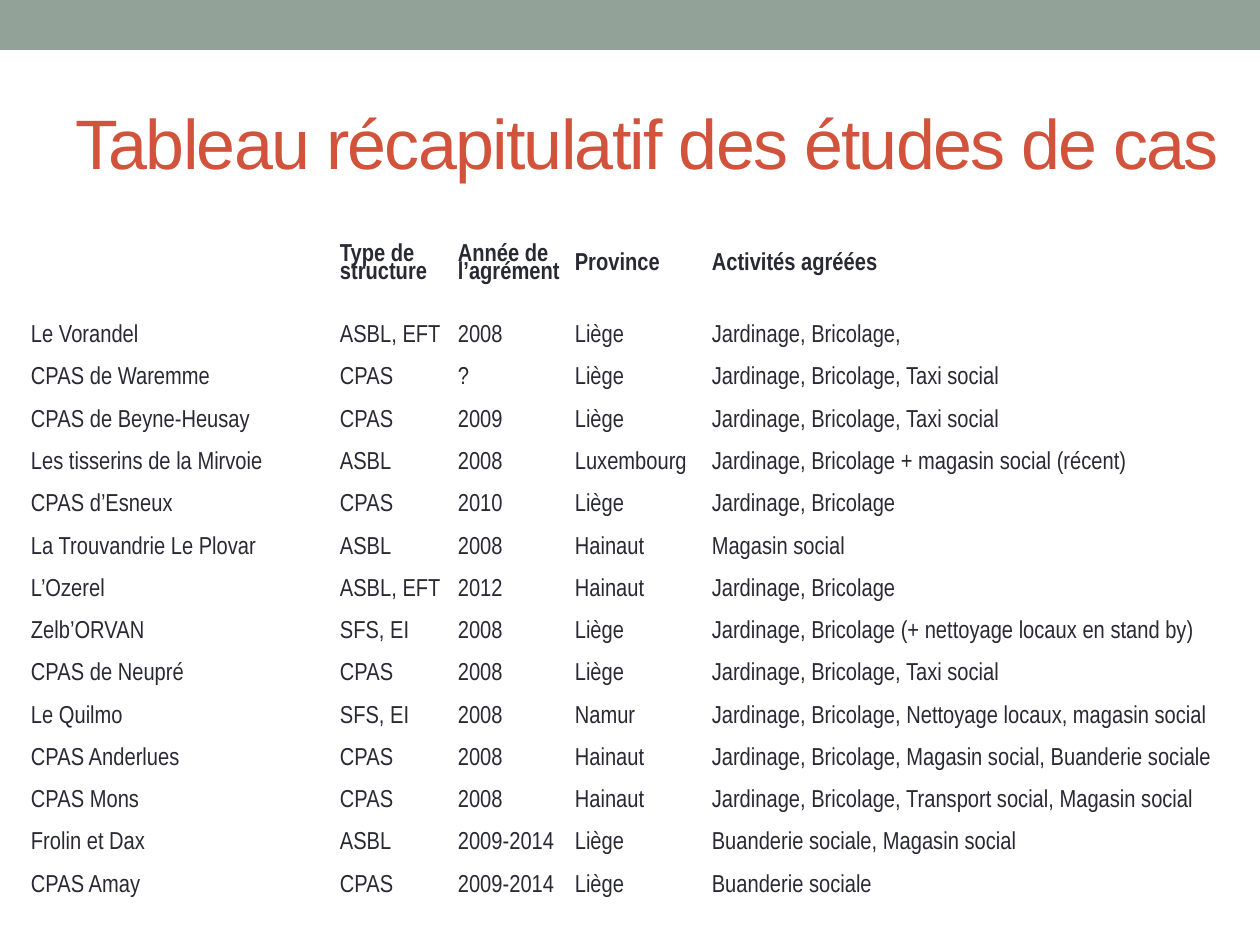
from lxml.etree import SubElement
from pptx import Presentation
from pptx.dml.color import RGBColor
from pptx.enum.shapes import MSO_SHAPE
from pptx.enum.text import MSO_ANCHOR, MSO_AUTO_SIZE, PP_ALIGN
from pptx.oxml.ns import qn
from pptx.util import Pt

PX = 914400 // 126
SAGE = RGBColor(0x93, 0xA2, 0x99)
BRICK = RGBColor(0xD2, 0x53, 0x3C)
INK = RGBColor(0x29, 0x29, 0x34)
WHITE = RGBColor(0xFF, 0xFF, 0xFF)

COLUMN_WIDTHS = [309, 118, 117, 137, 540]
HEADER_HEIGHT = 102
CELL_INSET = 6
ROWS = [
    ("", "Type de structure", "Année de l’agrément", "Province", "Activités agréées"),
    ("Le Vorandel", "ASBL, EFT", "2008", "Liège", "Jardinage, Bricolage,"),
    ("CPAS de Waremme", "CPAS", "?", "Liège", "Jardinage, Bricolage, Taxi social"),
    ("CPAS de Beyne-Heusay", "CPAS", "2009", "Liège", "Jardinage, Bricolage, Taxi social"),
    ("Les tisserins de la Mirvoie", "ASBL", "2008", "Luxembourg",
     "Jardinage, Bricolage + magasin social (récent)"),
    ("CPAS d’Esneux", "CPAS", "2010", "Liège", "Jardinage, Bricolage"),
    ("La Trouvandrie Le Plovar", "ASBL", "2008", "Hainaut", "Magasin social"),
    ("L’Ozerel", "ASBL, EFT", "2012", "Hainaut", "Jardinage, Bricolage"),
    ("Zelb’ORVAN", "SFS, EI", "2008", "Liège",
     "Jardinage, Bricolage (+ nettoyage locaux en stand by)"),
    ("CPAS de Neupré", "CPAS", "2008", "Liège", "Jardinage, Bricolage, Taxi social"),
    ("Le Quilmo", "SFS, EI", "2008", "Namur",
     "Jardinage, Bricolage, Nettoyage locaux, magasin social"),
    ("CPAS Anderlues", "CPAS", "2008", "Hainaut",
     "Jardinage, Bricolage, Magasin social, Buanderie sociale"),
    ("CPAS Mons", "CPAS", "2008", "Hainaut",
     "Jardinage, Bricolage, Transport social, Magasin social"),
    ("Frolin et Dax", "ASBL", "2009-2014", "Liège", "Buanderie sociale, Magasin social"),
    ("CPAS Amay", "CPAS", "2009-2014", "Liège", "Buanderie sociale"),
]


def scaled(box):
    return [length * PX for length in box]


def add_run(para, text, font_name, size, color, bold=False):
    span = para.add_run()
    span.text = text
    span.font.name = font_name
    span.font.size = Pt(size)
    span.font.bold = bold
    span.font.color.rgb = color
    return span


def add_band(page, box):
    band = page.shapes.add_shape(MSO_SHAPE.RECTANGLE, *scaled(box))
    band.shadow.inherit = False
    band.fill.solid()
    band.fill.fore_color.rgb = SAGE
    band.line.fill.background()


def fill_title(page, box, text):
    title = page.shapes.title
    title.left, title.top, title.width, title.height = scaled(box)
    frame = title.text_frame
    frame.word_wrap = True
    frame.auto_size = MSO_AUTO_SIZE.NONE
    frame.vertical_anchor = MSO_ANCHOR.MIDDLE
    para = frame.paragraphs[0]
    para.alignment = PP_ALIGN.LEFT
    span = add_run(para, text, "Arial", 40, BRICK)
    span.font._element.set("spc", "-100")


def add_borders(cell):
    properties = cell._tc.get_or_add_tcPr()
    for position, side in enumerate(("lnL", "lnR", "lnT", "lnB")):
        line = SubElement(properties, qn(f"a:{side}"), w=str(Pt(1)))
        fill = SubElement(line, qn("a:solidFill"))
        SubElement(fill, qn("a:srgbClr"), val=str(WHITE))
        properties.insert(position, line)


def fill_cell(cell, text, bold):
    cell.fill.background()
    add_borders(cell)
    cell.vertical_anchor = MSO_ANCHOR.MIDDLE
    cell.margin_left = cell.margin_right = CELL_INSET * PX
    cell.margin_top = cell.margin_bottom = CELL_INSET * PX
    para = cell.text_frame.paragraphs[0]
    para.line_spacing = 0.8
    if text:
        add_run(para, text, "Arial Narrow", 14, INK, bold)


def add_case_table(page, box):
    frame = page.shapes.add_table(len(ROWS), len(COLUMN_WIDTHS), *scaled(box))
    table = frame.table
    table.first_row = True
    table.horz_banding = False
    for column, width in zip(table.columns, COLUMN_WIDTHS):
        column.width = width * PX
    body_height = (box[3] - HEADER_HEIGHT) * PX // (len(ROWS) - 1)
    for index, (row, texts) in enumerate(zip(table.rows, ROWS)):
        row.height = body_height if index else HEADER_HEIGHT * PX
        for cell, text in zip(row.cells, texts):
            fill_cell(cell, text, bold=index == 0)


def main():
    deck = Presentation()
    deck.slide_width = 1260 * PX
    deck.slide_height = 945 * PX
    page = deck.slides.add_slide(deck.slide_layouts[5])
    add_band(page, (0, 0, 1260, 50))
    fill_title(page, (63, 73, 1172, 136), "Tableau récapitulatif des études de cas")
    add_case_table(page, (25, 214, sum(COLUMN_WIDTHS), 694))
    deck.save("out.pptx")


if __name__ == "__main__":
    main()
